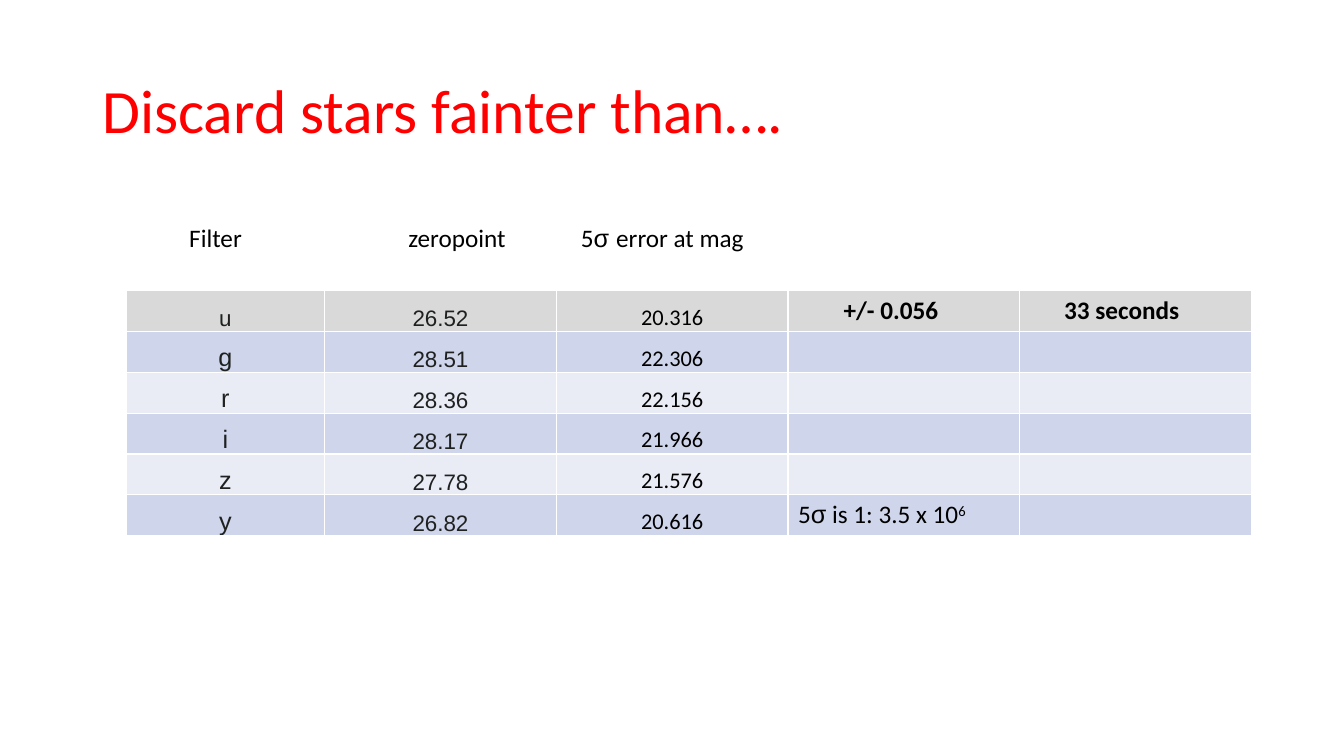
"""Build a slide with a table of the faint magnitude limit for each filter."""
import pptx
import pptx.util
import pptx.dml.color
import pptx.enum.text
import lxml.etree
from pptx.util import Cm, Pt

COLORS = {"title": "FF0000", "text": "000000", "dark": "1F2121",
          "header": "D9D9D9", "odd": "CFD5EA", "even": "E9EBF5"}
ANCHOR = pptx.enum.text.MSO_ANCHOR
ALIGN = pptx.enum.text.PP_ALIGN


def rgb(name):
    return pptx.dml.color.RGBColor.from_string(COLORS[name])


def write(p, runs, size, color="text", bold=False):
    p.font.size, p.font.bold = Pt(size), bold
    p.font.color.rgb = rgb(color)
    for text, font in runs:
        r = p.add_run()
        r.text, r.font.name = text, font
    return p


prs = pptx.Presentation()
prs.slide_width, prs.slide_height = Cm(33.87), Cm(19.05)
s = prs.slides.add_slide(prs.slide_layouts[6])

tf = s.shapes.add_textbox(Cm(2.33), Cm(1.01), Cm(29.21), Cm(3.68)).text_frame
tf.word_wrap = True
tf.vertical_anchor = ANCHOR.MIDDLE
p = write(tf.paragraphs[0], [("Discard stars fainter than….", "Calibri")], 44, "title")
p.line_spacing = 0.9

rows = [("u", "26.52", "20.316"), ("g", "28.51", "22.306"), ("r", "28.36", "22.156"),
        ("i", "28.17", "21.966"), ("z", "27.78", "21.576"), ("y", "26.82", "20.616")]
col_widths = [5.0] + [5.84] * 4
table = s.shapes.add_table(len(rows), len(col_widths), Cm(3.18), Cm(7.32),
                           Cm(sum(col_widths)), Cm(6.18)).table
for col, width in zip(table.columns, col_widths):
    col.width = Cm(width)

for i, values in enumerate(rows):
    table.rows[i].height = Cm(1.03)
    fill = "header" if i == 0 else "odd" if i % 2 else "even"
    for cell in table.rows[i].cells:
        cell.fill.solid()
        cell.fill.fore_color.rgb = rgb(fill)
    for j, value in enumerate(values):
        cell = table.cell(i, j)
        cell.vertical_anchor = ANCHOR.BOTTOM
        cell.margin_left = cell.margin_right = cell.margin_top = Cm(0.03)
        cell.margin_bottom = 0
        font, color = ("Calibri", "text") if j == 2 else ("Arial", "dark")
        size = 18 if j == 0 and i > 0 else 16
        p = write(cell.text_frame.paragraphs[0], [(value, font)], size, color)
        p.alignment = ALIGN.CENTER

for j, note, indent in [(3, "+/- 0.056", 1.4), (4, "33 seconds", 1.12)]:
    cell = table.cell(0, j)
    cell.margin_left = Cm(indent)
    write(cell.text_frame.paragraphs[0], [(note, "Calibri")], 18, bold=True)

p = write(table.cell(5, 3).text_frame.paragraphs[0],
          [("5", "Calibri"), ("σ", "Arial"), (" is 1: 3.5 x 10", "Calibri"), ("6", "Calibri")], 18)
p.runs[-1].font._element.set("baseline", "30000")

tf = s.shapes.add_textbox(Cm(4.52), Cm(5.49), Cm(14.9), Cm(1.03)).text_frame
tf.word_wrap = True
p = write(tf.paragraphs[0], [("Filter\tzeropoint\t5", "Calibri"), ("σ ", "Arial"),
                             ("error at mag", "Calibri")], 18)
ns = "{http://schemas.openxmlformats.org/drawingml/2006/main}"
tabs = lxml.etree.Element(ns + "tabLst")
for pos in (5.52, 9.87):
    lxml.etree.SubElement(tabs, ns + "tab", pos=str(Cm(pos)), algn="l")
p._p.get_or_add_pPr().insert(0, tabs)

prs.save("out.pptx")
